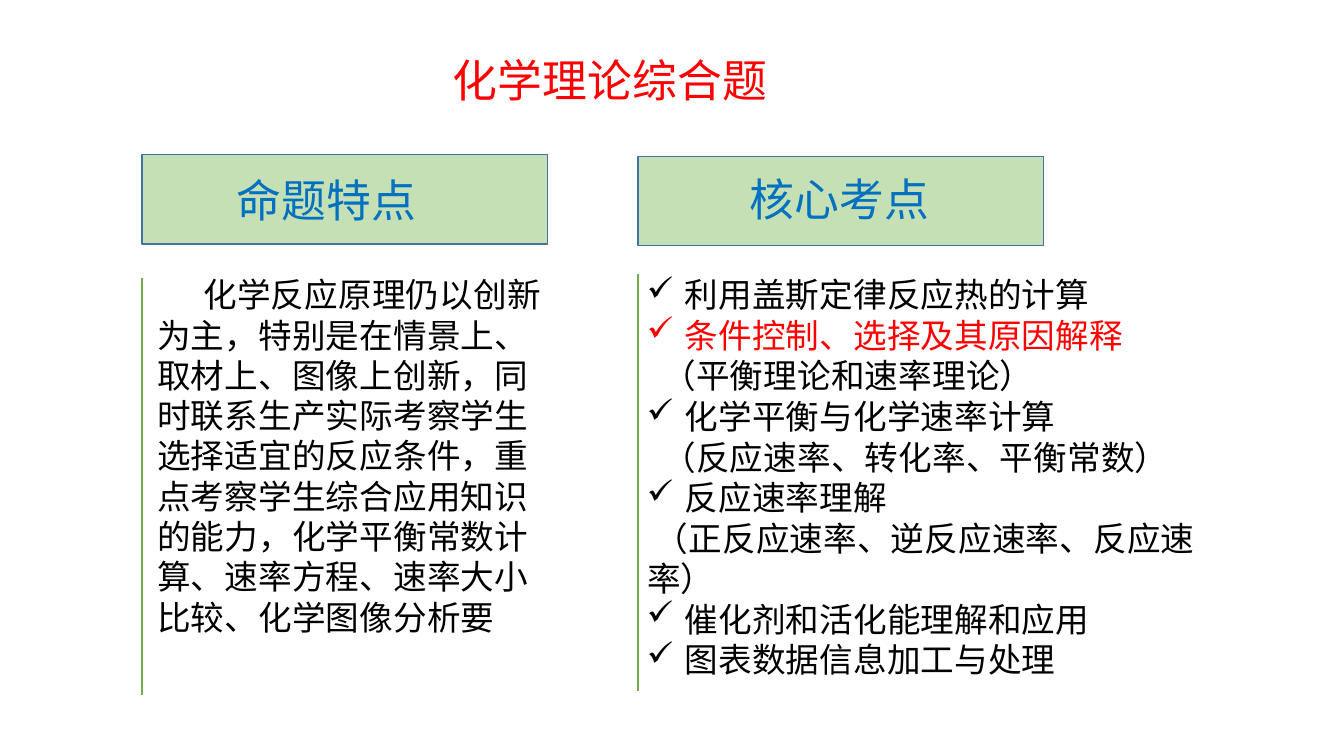
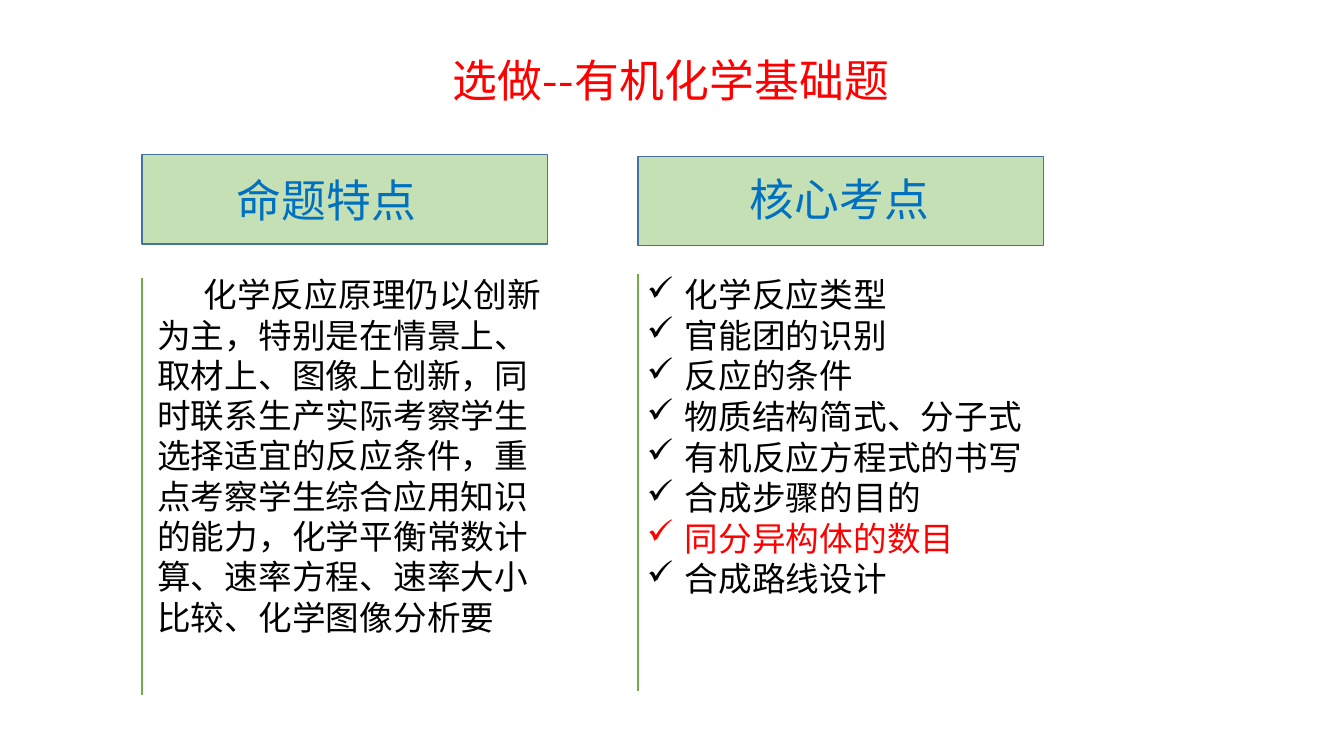
from lxml import etree
from pptx import Presentation
from pptx.dml.color import RGBColor
from pptx.enum.shapes import MSO_CONNECTOR as Connector, MSO_SHAPE as Shape
from pptx.enum.text import MSO_AUTO_SIZE as AutoSize
from pptx.oxml.ns import qn
from pptx.util import Pt

RED = RGBColor(0xFF, 0x00, 0x00)
BLUE = RGBColor(0x00, 0x70, 0xC0)
BLACK = RGBColor(0x00, 0x00, 0x00)
BAND_FILL = RGBColor(0xC5, 0xE0, 0xB4)
BAND_EDGE = RGBColor(0x43, 0x73, 0x9E)
RULE_GREEN = RGBColor(0x70, 0xAD, 0x47)
FONT = "Noto Sans CJK SC"

FEATURES = (
    "化学反应原理仍以创新为主，特别是在情景上、取材上、图像上创新，"
    "同时联系生产实际考察学生选择适宜的反应条件，重点考察学生综合应用知识的能力，"
    "化学平衡常数计算、速率方程、速率大小比较、化学图像分析要"
)

CHECK, KEY, NOTE, NEAR_NOTE, LEAD = "check", "key", "note", "near note", "lead"
STYLES = {
    CHECK: dict(margin=45.5, indent=-27, color=BLACK, bullet="✓"),
    KEY: dict(margin=45.5, indent=-27, color=RED, bullet="✓"),
    NOTE: dict(margin=18.7, indent=11, color=BLACK),
    NEAR_NOTE: dict(margin=18.7, indent=5.5, color=BLACK),
    LEAD: dict(margin=18.7, indent=33, color=BLACK),
}

TOPICS = [
    ("化学理论综合题", [
        (CHECK, "利用盖斯定律反应热的计算"),
        (KEY, "条件控制、选择及其原因解释"),
        (NOTE, "（平衡理论和速率理论）"),
        (CHECK, "化学平衡与化学速率计算"),
        (NOTE, "（反应速率、转化率、平衡常数）"),
        (CHECK, "反应速率理解"),
        (NEAR_NOTE, "（正反应速率、逆反应速率、反应速率）"),
        (CHECK, "催化剂和活化能理解和应用"),
        (CHECK, "图表数据信息加工与处理"),
    ]),
    ("选做--有机化学基础题", [
        (CHECK, "化学反应类型"),
        (CHECK, "官能团的识别"),
        (CHECK, "反应的条件"),
        (CHECK, "物质结构简式、分子式"),
        (CHECK, "有机反应方程式的书写"),
        (CHECK, "合成步骤的目的"),
        (KEY, "同分异构体的数目"),
        (CHECK, "合成路线设计"),
    ]),
]

COLUMNS = [
    dict(heading="命题特点", left=101.5, band_top=110.2, heading_at=(150.5, 123.1),
         rule_top=198.7, body_left=93.6, body_width=306),
    dict(heading="核心考点", left=455.8, band_top=111.6, heading_at=(517, 122.4),
         rule_top=195.8, body_left=443.5, body_width=438.5),
]
BAND_WIDTH, BAND_HEIGHT = 289.4, 64
RULE_LENGTH = 298
BODY_TOP, BODY_HEIGHT = 195.8, 262
HEADING_HEIGHT = 39


def style_paragraph(paragraph, size, color, margin=18.7, indent=0, bullet=None):
    properties = paragraph._p.get_or_add_pPr()
    properties.set("marL", str(Pt(margin)))
    properties.set("indent", str(Pt(indent)))
    if bullet:
        etree.SubElement(properties, qn("a:buChar")).set("char", bullet)
    else:
        etree.SubElement(properties, qn("a:buNone"))
    font = paragraph.font
    font.size = Pt(size)
    font.color.rgb = color
    font.name = FONT
    defaults = properties.find(qn("a:defRPr"))
    defaults.set("spc", "10")
    etree.SubElement(defaults, qn("a:ea")).set("typeface", FONT)


def add_text(slide, left, top, width, height, size, lines):
    box = slide.shapes.add_textbox(Pt(left), Pt(top), Pt(width), Pt(height))
    frame = box.text_frame
    frame.word_wrap = True
    frame.auto_size = AutoSize.SHAPE_TO_FIT_TEXT
    frame.margin_left = frame.margin_top = frame.margin_right = frame.margin_bottom = 0
    for index, (text, style) in enumerate(lines):
        paragraph = frame.add_paragraph() if index else frame.paragraphs[0]
        paragraph.text = text
        style_paragraph(paragraph, size, **style)
        if index:
            paragraph.space_before = Pt(0.2)


def add_column(slide, column, points):
    left = column["left"]
    band = slide.shapes.add_shape(
        Shape.RECTANGLE, Pt(left), Pt(column["band_top"]), Pt(BAND_WIDTH), Pt(BAND_HEIGHT))
    band.shadow.inherit = False
    band.fill.solid()
    band.fill.fore_color.rgb = BAND_FILL
    band.line.color.rgb = BAND_EDGE
    band.line.width = Pt(1)
    add_text(slide, *column["heading_at"], 191.5, HEADING_HEIGHT, 32,
             [(column["heading"], dict(color=BLUE))])

    top = column["rule_top"]
    rule = slide.shapes.add_connector(
        Connector.STRAIGHT, Pt(left), Pt(top), Pt(left), Pt(top + RULE_LENGTH))
    rule.line.color.rgb = RULE_GREEN
    rule.line.width = Pt(1.5)
    etree.SubElement(rule._element.spPr, qn("a:effectLst"))
    add_text(slide, column["body_left"], BODY_TOP, column["body_width"], BODY_HEIGHT, 24,
             [(text, STYLES[kind]) for kind, text in points])


def main():
    """Build one two-column slide for each exam topic."""
    deck = Presentation()
    deck.slide_width, deck.slide_height = Pt(960), Pt(540)
    for title, exam_points in TOPICS:
        slide = deck.slides.add_slide(deck.slide_layouts[6])
        add_text(slide, 304.6, 37.4, 353.5, HEADING_HEIGHT, 32, [(title, dict(color=RED))])
        for column, points in zip(COLUMNS, ([(LEAD, FEATURES)], exam_points)):
            add_column(slide, column, points)
    deck.save("out.pptx")


if __name__ == "__main__":
    main()
